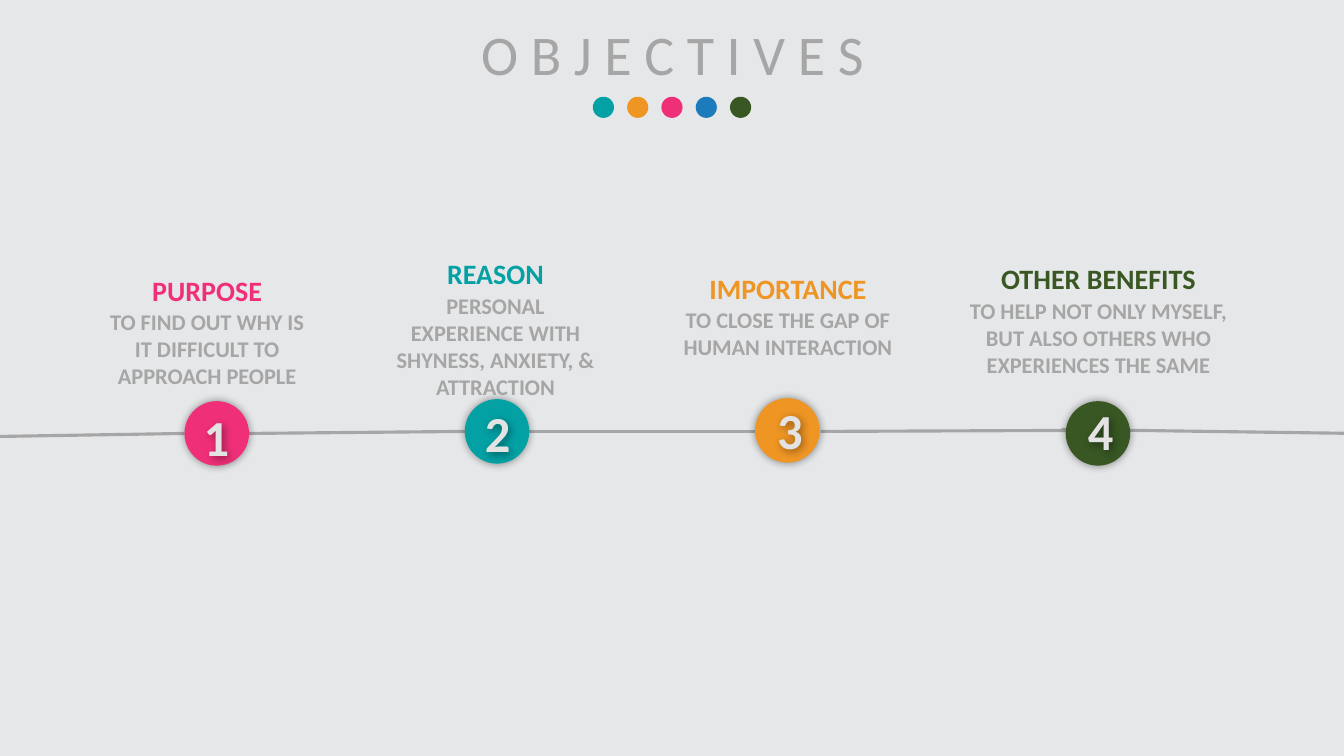
from pptx import Presentation
from pptx.dml.color import RGBColor
from pptx.enum.shapes import MSO_CONNECTOR as LINE, MSO_SHAPE as SHAPE
from pptx.enum.text import MSO_AUTO_SIZE as AUTO, PP_ALIGN as ALIGN
from pptx.oxml import parse_xml
from pptx.oxml.ns import nsdecls
from pptx.util import Pt

PX = 9144  # EMU per px, 100 px to the inch

THEME = {
    "font": "Calibri",
    "bg": "E6E7E9", "grey": "A6A6A6", "number": "E3E3E3", "shadow": "000000",
    "teal": "03A1A4", "orange": "EE9524", "pink": "EF3078",
    "blue": "1C7CBB", "green": "385723",
    "title_pt": 40, "number_pt": 36, "heading_pt": 20, "body_pt": 16,
    "line_pt": 2.25,
}


def add_text(shapes, text, box, size, color, bold=True):
    s = shapes.add_textbox(*(v * PX for v in box))
    tf = s.text_frame
    tf.word_wrap = True
    tf.auto_size = AUTO.SHAPE_TO_FIT_TEXT
    p = tf.paragraphs[0]
    p.alignment = ALIGN.CENTER
    r = p.add_run()
    r.text = text
    r.font.name = THEME["font"]
    r.font.size = Pt(THEME[size])
    r.font.bold = bold
    r.font.color.rgb = RGBColor.from_string(THEME[color])
    return s


def add_disc(shapes, x, y, size, color):
    s = shapes.add_shape(SHAPE.OVAL, x * PX, y * PX, size * PX, size * PX)
    s.fill.solid()
    s.fill.fore_color.rgb = RGBColor.from_string(THEME[color])
    s.line.fill.background()
    s.shadow.inherit = False
    return s


prs = Presentation()
prs.slide_width, prs.slide_height = 1333 * PX, 750 * PX
slide = prs.slides.add_slide(prs.slide_layouts[6])
slide.background.fill.solid()
slide.background.fill.fore_color.rgb = RGBColor.from_string(THEME["bg"])
shapes = slide.shapes

# Timeline segments between the discs
for x1, y1, x2, y2 in [
    (183, 430, -1, 433),
    (814, 428, 1069, 427),
    (1345, 430, 1053, 426),
    (749, 428, 525, 428),
    (247, 430, 461, 428),
]:
    line = shapes.add_connector(LINE.STRAIGHT, x1 * PX, y1 * PX, x2 * PX, y2 * PX)
    line.line.color.rgb = RGBColor.from_string(THEME["grey"])
    line.line.width = Pt(THEME["line_pt"])
    line._element.spPr.append(parse_xml(f"<a:effectLst {nsdecls('a')}/>"))

# Title and its row of dots
add_text(shapes, "O B J E C T I V E S", (269, 14, 796, 77), "title_pt", "grey", False)
dots = shapes.add_group_shape()
for i, color in enumerate(["teal", "orange", "pink", "blue", "green"]):
    add_disc(dots.shapes, 588 + 34 * i, 96, 21, color)

# Steps: heading, body, colour, disc corner, number corner, text corner and width, body height
steps = [
    ("PURPOSE", "TO FIND OUT WHY IS IT DIFFICULT TO APPROACH PEOPLE",
     "pink", (183, 398), (192, 398), (89, 266, 233), 91),
    ("REASON", "PERSONAL EXPERIENCE WITH SHYNESS, ANXIETY, & ATTRACTION",
     "teal", (461, 396), (471, 394), (375, 250, 233), 118),
    ("IMPORTANCE", "TO CLOSE THE GAP OF HUMAN INTERACTION",
     "orange", (749, 395), (761, 391), (665, 264, 233), 91),
    ("OTHER BENEFITS", "TO HELP NOT ONLY MYSELF, BUT ALSO OTHERS WHO EXPERIENCES THE SAME",
     "green", (1057, 398), (1069, 392), (947, 255, 285), 145),
]

# Numbered discs, with a soft shadow under disc and number
for n, (_, _, color, disc_at, number_at, _, _) in enumerate(steps, 1):
    disc = add_disc(shapes, *disc_at, 64, color)
    number = add_text(shapes, str(n), (*number_at, 42, 71), "number_pt", "number")
    for s, distance in [(disc, 0), (number, 2)]:
        s.shadow.inherit = False
        s._element.spPr[-1].append(parse_xml(
            f'<a:outerShdw {nsdecls("a")} blurRad="{Pt(6)}" dist="{Pt(distance)}" dir="2700000"'
            f' algn="ctr" rotWithShape="0"><a:srgbClr val="{THEME["shadow"]}">'
            '<a:alpha val="40000"/></a:srgbClr></a:outerShdw>'))

# Heading and body above each disc
for heading, body, color, _, _, (x, y, w), body_h in steps:
    g = shapes.add_group_shape()
    add_text(g.shapes, heading, (x, y, w, 44), "heading_pt", color)
    add_text(g.shapes, body, (x, y + 35, w, body_h), "body_pt", "grey")

prs.save("out.pptx")
